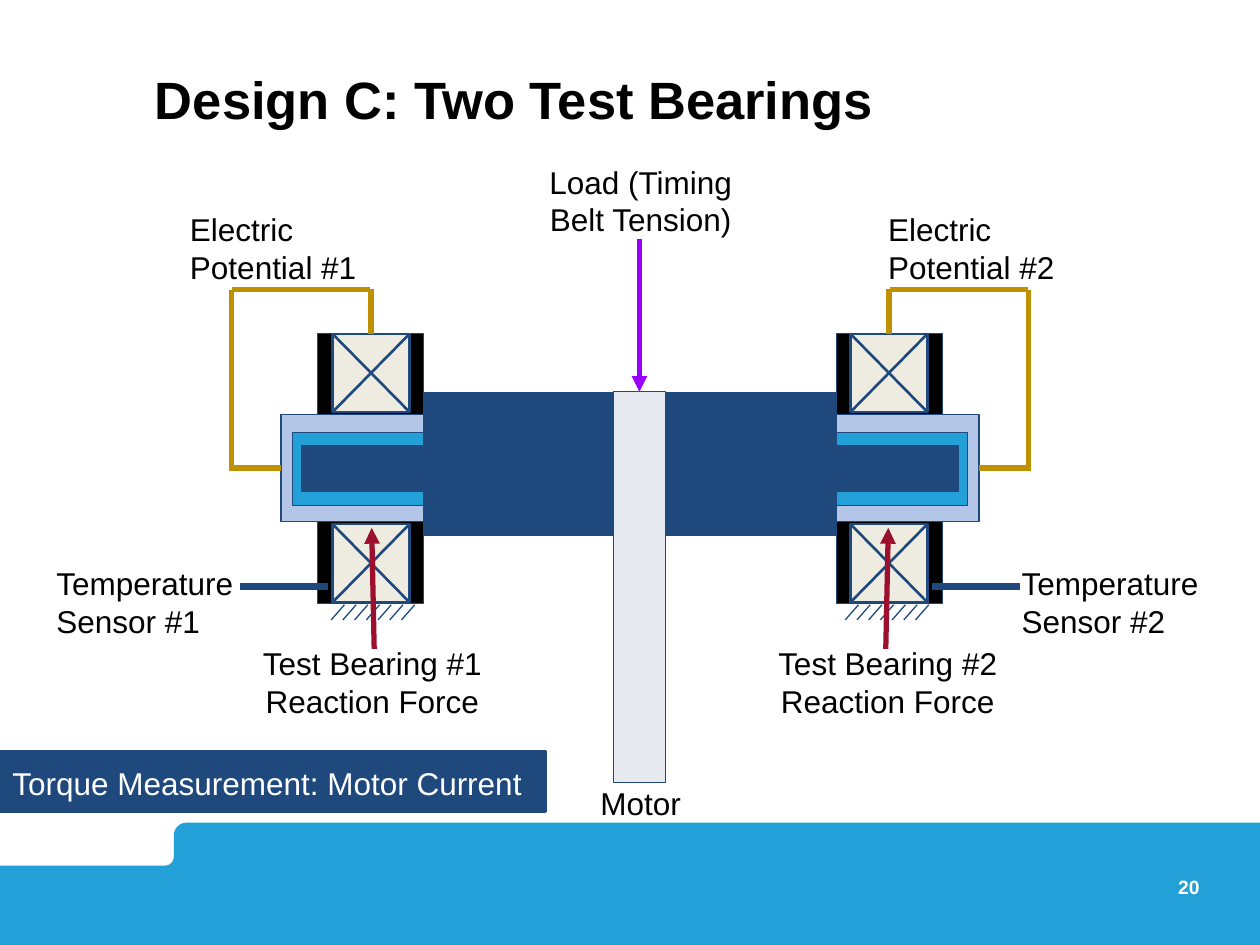
import math
from dataclasses import dataclass
from typing import Optional

import pptx
import pptx.dml.color
import pptx.enum.shapes
import pptx.enum.text
import pptx.oxml.ns
import pptx.util
from lxml import etree

ALIGN = pptx.enum.text.PP_ALIGN
ANCHOR = pptx.enum.text.MSO_ANCHOR
COLS, ROWS = 100, 75
CENTER = COLS / 2
NAVY, SKY, PALE, CREAM = "1F497D", "24A0D8", "B4C6E7", "EEECE1"
BLACK, WHITE, GOLD, RED, PURPLE = "000000", "FFFFFF", "BF9000", "9D102D", "9900FF"

prs = pptx.Presentation()
prs.slide_width = pptx.util.Inches(10)
prs.slide_height = pptx.util.Inches(7.5)
CELL = prs.slide_width // COLS


@dataclass
class Block:
    near: float
    far: float
    top: float
    height: float
    fill: str
    line_width: float = 0.75


@dataclass
class Label:
    text: str
    near: float
    far: float
    top: float
    height: float
    align: Optional[ALIGN] = None


SUPPORT = Block(16.4, 24.8, 26.5, 21.4, BLACK)
BEARINGS = [Block(17.5, 23.6, 26.5, 6.2, CREAM, 1.5),
            Block(17.5, 23.6, 41.6, 6.2, CREAM, 1.5)]
HOUSING = Block(8, 27.7, 32.9, 8.5, PALE)
SHAFT = [Block(8, 26.8, 34.3, 5.8, SKY),
         Block(8, 26.1, 35.4, 3.6, NAVY),
         Block(0, 16.4, 31.2, 11.3, NAVY)]
SENSOR = Block(24, 30.9, 46.3, 0.5, NAVY)
LABELS = [Label("Test Bearing #{} Reaction Force", 9.5, 31.4, 50.1, 7.4, ALIGN.CENTER),
          Label("Electric Potential #{}", 19.5, 35.9, 15.7, 7.7),
          Label("Temperature Sensor #{}", 30.1, 46.5, 43.8, 7.7)]


def cells(n: float) -> int:
    return round(n * CELL)


def rgb(color: str) -> pptx.dml.color.RGBColor:
    return pptx.dml.color.RGBColor.from_string(color)


def mirror(side: int, offset: float) -> float:
    return CENTER + side * offset


def left_edge(side: int, near: float, far: float) -> float:
    return min(mirror(side, near), mirror(side, far))


def write(sp, text: str, size: float, color: str, bold: bool = False,
          align=None, inset: float = 0.1, spacing: Optional[float] = None) -> None:
    tf = sp.text_frame
    tf.word_wrap = True
    tf.margin_left = tf.margin_right = pptx.util.Inches(inset)
    tf.margin_top = tf.margin_bottom = pptx.util.Inches(inset)
    tf.text = text
    p = tf.paragraphs[0]
    p.alignment = align
    p.line_spacing = spacing
    font = p.runs[0].font
    font.name, font.size, font.bold = "Arial", pptx.util.Pt(size), bold
    font.color.rgb = rgb(color)


def label(s, text: str, left: float, top: float, width: float, height: float,
          align=None):
    sp = s.shapes.add_textbox(cells(left), cells(top), cells(width), cells(height))
    write(sp, text, 18, BLACK, align=align)
    return sp


def rect(shapes, left: float, top: float, width: float, height: float,
         fill: str, line_width: float = 0.75):
    sp = shapes.add_shape(pptx.enum.shapes.MSO_SHAPE.RECTANGLE,
                          cells(left), cells(top), cells(width), cells(height))
    sp.shadow.inherit = False
    sp.fill.solid()
    sp.fill.fore_color.rgb = rgb(fill)
    sp.line.color.rgb = rgb(NAVY)
    sp.line.width = pptx.util.Pt(line_width)
    return sp


def block(shapes, b: Block, side: int):
    return rect(shapes, left_edge(side, b.near, b.far), b.top, b.far - b.near,
                b.height, b.fill, b.line_width)


def line(shapes, x1: float, y1: float, x2: float, y2: float, color: str = NAVY,
         width: float = 0.75, arrow: bool = False):
    c = shapes.add_connector(pptx.enum.shapes.MSO_CONNECTOR.STRAIGHT,
                             cells(x1), cells(y1), cells(x2), cells(y2))
    c.line.color.rgb = rgb(color)
    c.line.width = pptx.util.Pt(width)
    if arrow:
        ln = c.line._get_or_add_ln()
        etree.SubElement(ln, pptx.oxml.ns.qn("a:tailEnd"), type="triangle")
    etree.SubElement(c._element.spPr, pptx.oxml.ns.qn("a:effectLst"))
    return c


def bearing(s, b: Block, side: int):
    group = s.shapes.add_group_shape()
    box = block(group.shapes, b, side)
    x1, x2 = mirror(side, b.near), mirror(side, b.far)
    line(group.shapes, x1, b.top, x2, b.top + b.height, NAVY, 1.5)
    line(group.shapes, x2, b.top, x1, b.top + b.height, NAVY, 1.5)
    return box


def hatching(s, side: int, count: int = 7, pitch: float = 0.93, lean: float = 1.05) -> None:
    start = mirror(side, 20.4) - ((count - 1) * pitch + lean) / 2
    for i in range(count):
        x = start + i * pitch
        line(s.shapes, x + lean, 48, x, 49.2)


def wiring(s, side: int, upper, housing) -> None:
    x, outer = mirror(side, 20.6), mirror(side, 31.6)
    rise = line(s.shapes, x, 26.5, x, 22.9, GOLD, 3)
    rise.begin_connect(upper, 0)
    rise.end_x = rise.begin_x
    line(s.shapes, outer, 23, x, 23, GOLD, 3)
    line(s.shapes, outer, 37, outer, 23, GOLD, 3)
    back = line(s.shapes, mirror(side, 31.8), 37.15, mirror(side, 27.7), 37.15, GOLD, 3)
    back.end_connect(housing, 3 if side > 0 else 1)


def half(s, side: int, number: int) -> None:
    block(s.shapes, SUPPORT, side)
    upper, _ = [bearing(s, b, side) for b in BEARINGS]
    housing = block(s.shapes, HOUSING, side)
    for b in SHAFT:
        block(s.shapes, b, side)
    hatching(s, side)
    block(s.shapes, SENSOR, side)
    for t in LABELS:
        label(s, t.text.format(number), left_edge(side, t.near, t.far), t.top,
              t.far - t.near, t.height, t.align)
    wiring(s, side, upper, housing)


def arc(cx: float, cy: float, radius: float, start: int, end: int, steps: int = 8):
    angles = [math.radians(start + (end - start) * i / steps) for i in range(steps + 1)]
    return [(cells(cx + radius * math.cos(a)), cells(cy + radius * math.sin(a)))
            for a in angles]


def footer_band(s) -> None:
    outline = arc(13.1, 68, 0.7, 90, 0) + arc(14.8, 66.3, 1, 180, 270)
    outline += [(cells(x), cells(y)) for x, y in
                [(COLS, 65.3), (COLS, ROWS), (0, ROWS), (0, 68.7)]]
    fb = s.shapes.build_freeform(*outline[0])
    fb.add_line_segments(outline[1:], close=True)
    sp = fb.convert_to_shape()
    sp.shadow.inherit = False
    sp.fill.solid()
    sp.fill.fore_color.rgb = rgb(SKY)
    sp.line.fill.background()


def main() -> None:
    s = prs.slides.add_slide(prs.slide_layouts[5])
    footer_band(s)

    title = s.shapes.title
    title.left, title.top, title.width, title.height = map(cells, (11.6, 4.7, 69.9, 5.5))
    write(title, "Design C: Two Test Bearings", 30, BLACK, True, ALIGN.LEFT, 0.07, 1.15)
    title.text_frame.vertical_anchor = ANCHOR.MIDDLE

    for side, number in ((1, 2), (-1, 1)):
        half(s, side, number)

    pulley = rect(s.shapes, 48.7, 31.1, 4.1, 31, "E7E9F0")
    load = line(s.shapes, 50.75, 19, 50.75, 31.1, PURPLE, 3, arrow=True)
    load.end_connect(pulley, 0)
    for side in (1, -1):
        line(s.shapes, mirror(side, 20.3), 51.5, mirror(side, 20.5), 41.9, RED, 3, arrow=True)
    label(s, "Load (Timing Belt Tension)", 41.8, 11.9, 18.1, 7.4, ALIGN.CENTER)
    label(s, "Motor", 39.9, 61.2, 21.9, 7.4, ALIGN.CENTER)

    number = label(s, "20", 89.4, 68.9, 5.8, 4)
    write(number, "20", 11, WHITE, True, ALIGN.RIGHT, 0, 1.29)

    note = rect(s.shapes, 0, 59.6, 43.3, 4.8, NAVY, 1.5)
    write(note, "Torque Measurement: Motor Current", 18, WHITE, align=ALIGN.LEFT)
    note.text_frame.vertical_anchor = ANCHOR.TOP

    prs.save("out.pptx")


if __name__ == "__main__":
    main()
